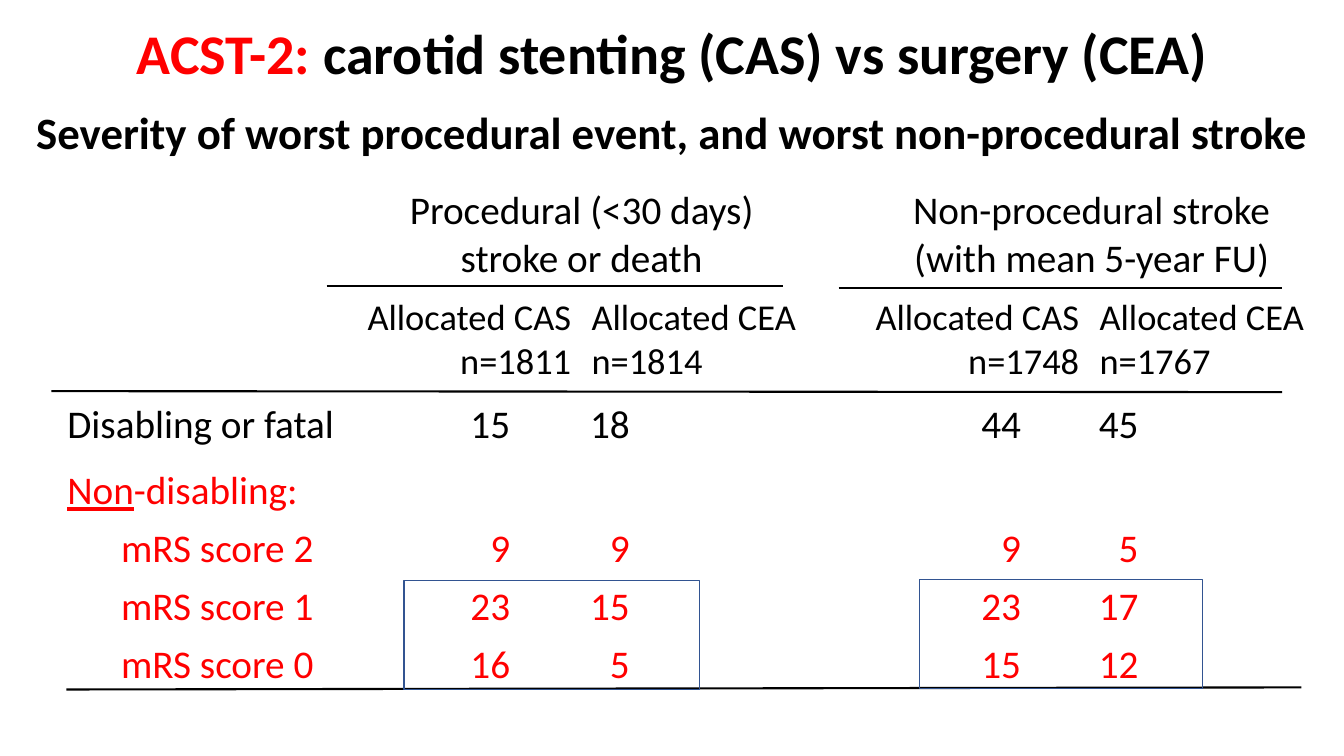
"""Build the ACST-2 slide on severity of procedural and non-procedural events."""
from lxml.etree import SubElement
from pptx import Presentation
from pptx.dml.color import RGBColor
from pptx.enum.shapes import MSO_CONNECTOR, MSO_SHAPE
from pptx.enum.text import MSO_ANCHOR, PP_ALIGN
from pptx.oxml.ns import qn
from pptx.util import Pt

COLORS = {"text": "000000", "accent": "FF0000", "box": "325491"}
FONT = "Calibri"
COLUMN_WIDTHS = [207.4, 167, 173.5, 25.2, 164.2, 167]
ROW_HEIGHTS = [78.5, 68.4, 53.3] + [41.4] * 4
COUNT_COLUMNS = [1, 2, 4, 5]
COUNT_RIGHT_MARGINS = [51, 139, 49, 132]
PERIODS = [
    (1, "Procedural (<30 days) \nstroke or death "),
    (4, "Non-procedural stroke\n(with mean 5-year FU)"),
]
ARMS = ["Allocated CAS\nn=1811", "Allocated CEA\nn=1814",
        "Allocated CAS\nn=1748", "Allocated CEA\nn=1767"]
SEVERITIES = [
    (2, "Disabling or fatal", [15, 18, 44, 45], "text", 7.2),
    (4, "mRS score 2", [9, 9, 9, 5], "accent", 45.5),
    (5, "mRS score 1", [23, 15, 23, 17], "accent", 45.5),
    (6, "mRS score 0", [16, 5, 15, 12], "accent", 45.5),
]
RULES = [
    (192.3, 75.5, 518.4, 75.5),
    (558, 77, 874.8, 77),
    (-4.3, 150.4, 874.8, 151.1),
    (6.5, 363.5, 888.5, 362),
]
MILD_STROKE_BOXES = [(247.7, 285.7, 211, 77.8), (615.6, 285, 202.3, 77.8)]


def rgb(name):
    """Return the named colour."""
    return RGBColor.from_string(COLORS[name])


def add_run(paragraph, text, size=28, color="text", bold=False, underline=False):
    """Append one formatted run to a paragraph."""
    run = paragraph.add_run()
    run.text = text
    font = run.font
    font.name, font.size, font.bold, font.underline = FONT, Pt(size), bold, underline
    font.color.rgb = rgb(color)


def write_cell(cell, text, align=PP_ALIGN.LEFT, anchor=MSO_ANCHOR.MIDDLE,
               left=7.2, right=7.2, **font):
    """Fill a table cell, one paragraph for each line of text."""
    cell.vertical_anchor = anchor
    cell.margin_left, cell.margin_right = Pt(left), Pt(right)
    frame = cell.text_frame
    for index, line in enumerate(text.split("\n")):
        paragraph = frame.add_paragraph() if index else frame.paragraphs[0]
        paragraph.alignment = align
        add_run(paragraph, line, **font)


def add_heading(slide, left, top, width, height):
    """Place the trial title and the subject line."""
    frame = slide.shapes.add_textbox(Pt(left), Pt(top), Pt(width), Pt(height)).text_frame
    frame.word_wrap = True
    title, subject = frame.paragraphs[0], frame.add_paragraph()
    for paragraph in (title, subject):
        paragraph.alignment = PP_ALIGN.CENTER
        paragraph.line_spacing = 0.9
    subject.space_before = Pt(17.6)
    add_run(title, "ACST-2: ", size=40, color="accent", bold=True)
    add_run(title, "carotid stenting (CAS) vs surgery (CEA)", size=40, bold=True)
    add_run(subject, "Severity of worst procedural event, and worst non-procedural stroke",
            size=32, bold=True)


def add_severity_table(slide, left, top, width, height):
    """Place the table of event counts by severity and treatment arm."""
    table = slide.shapes.add_table(len(ROW_HEIGHTS), len(COLUMN_WIDTHS), Pt(left), Pt(top),
                                   Pt(width), Pt(height)).table
    table.first_row = table.horz_banding = False
    for column, column_width in zip(table.columns, COLUMN_WIDTHS):
        column.width = Pt(column_width)
    for row, row_height in zip(table.rows, ROW_HEIGHTS):
        row.height = Pt(row_height)
    for cell in table.iter_cells():
        cell.fill.background()

    for column, period in PERIODS:
        heading = table.cell(0, column)
        heading.merge(table.cell(0, column + 1))
        write_cell(heading, period, align=PP_ALIGN.CENTER)
    for index, (column, arm) in enumerate(zip(COUNT_COLUMNS, ARMS)):
        align = PP_ALIGN.LEFT if index % 2 else PP_ALIGN.RIGHT
        write_cell(table.cell(1, column), arm, align=align, size=26)

    non_disabling = table.cell(3, 0).text_frame.paragraphs[0]
    add_run(non_disabling, "Non", color="accent", underline=True)
    add_run(non_disabling, "-disabling:", color="accent")

    for row, severity, counts, color, indent in SEVERITIES:
        anchor = MSO_ANCHOR.MIDDLE if row == 2 else MSO_ANCHOR.TOP
        write_cell(table.cell(row, 0), severity, anchor=anchor, left=indent, color=color)
        for column, count, margin in zip(COUNT_COLUMNS, counts, COUNT_RIGHT_MARGINS):
            write_cell(table.cell(row, column), str(count), align=PP_ALIGN.RIGHT,
                       anchor=anchor, left=0, right=margin, color=color)


def add_rules_and_boxes(slide, left, top):
    """Draw the table rules and the frames around the mildest strokes."""
    for x1, y1, x2, y2 in RULES:
        rule = slide.shapes.add_connector(MSO_CONNECTOR.STRAIGHT, Pt(left + x1), Pt(top + y1),
                                          Pt(left + x2), Pt(top + y2))
        rule.line.color.rgb = rgb("text")
        rule.line.width = Pt(1.5)
        SubElement(rule._element.spPr, qn("a:effectLst"))
    for x, y, width, height in MILD_STROKE_BOXES:
        frame = slide.shapes.add_shape(MSO_SHAPE.RECTANGLE, Pt(left + x), Pt(top + y),
                                       Pt(width), Pt(height))
        frame.shadow.inherit = False
        frame.fill.background()
        frame.line.color.rgb = rgb("box")
        frame.line.width = Pt(1)


def main():
    """Assemble and save the slide."""
    deck = Presentation()
    deck.slide_width, deck.slide_height = Pt(960), Pt(540)
    slide = deck.slides.add_slide(deck.slide_layouts[6])
    add_heading(slide, 0, 15, 960, 104.4)
    add_severity_table(slide, 41, 129, sum(COLUMN_WIDTHS), sum(ROW_HEIGHTS))
    add_rules_and_boxes(slide, 41, 129)
    deck.save("out.pptx")


if __name__ == "__main__":
    main()
